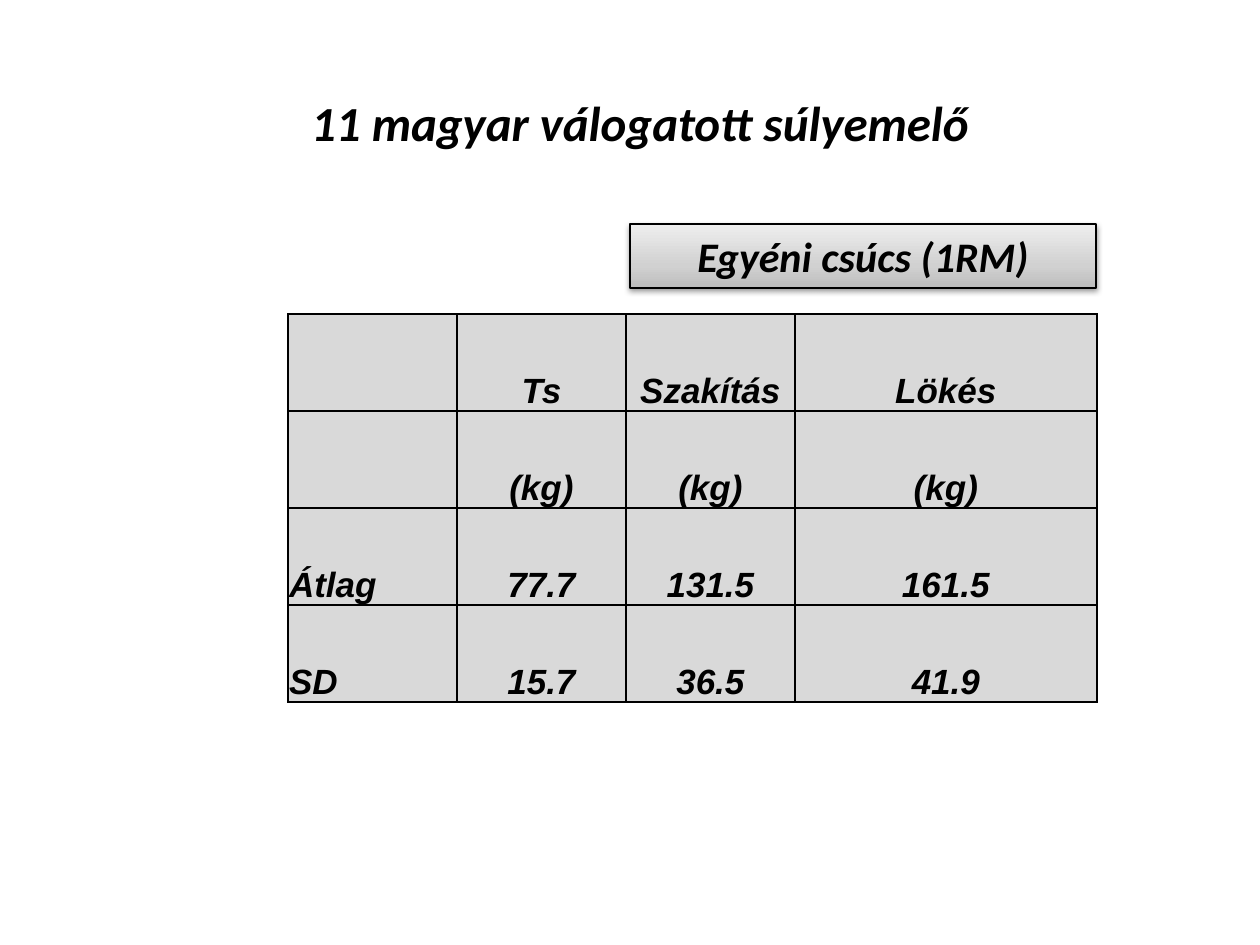
"""Build a slide with the results table of Hungarian weightlifters."""
import pptx
import pptx.dml.color
import pptx.enum.shapes
import pptx.enum.text
import pptx.oxml
import pptx.oxml.ns
import pptx.util

SCALE = 914400 / 126
BLACK = pptx.dml.color.RGBColor(0, 0, 0)
CELL_GRAY = pptx.dml.color.RGBColor(0xD9, 0xD9, 0xD9)
GRADIENT = {0: "BDBDBD", 35: "D1D1D1", 100: "EEEEEE"}
NAMESPACE = pptx.oxml.ns.nsdecls("a")
CENTER = pptx.enum.text.PP_ALIGN.CENTER
LEFT = pptx.enum.text.PP_ALIGN.LEFT


def px(*lengths):
    return [pptx.util.Emu(round(length * SCALE)) for length in lengths]


def write(text_frame, text, font_name, size, alignment=CENTER):
    paragraph = text_frame.paragraphs[0]
    paragraph.alignment = alignment
    run = paragraph.add_run()
    run.text = text
    font_format = {"name": font_name, "size": pptx.util.Pt(size), "bold": True, "italic": True}
    for name, value in font_format.items():
        setattr(run.font, name, value)
    run.font.color.rgb = BLACK


presentation = pptx.Presentation()
presentation.slide_width, presentation.slide_height = px(1260, 945)
slide = presentation.slides.add_slide(presentation.slide_layouts[6])

columns = [169, 169, 169, 302]
row_height = 97
rows = [
    ["", "Ts", "Szakítás", "Lökés"],
    ["", "(kg)", "(kg)", "(kg)"],
    ["Átlag", "77.7", "131.5", "161.5"],
    ["SD", "15.7", "36.5", "41.9"],
]
table = slide.shapes.add_table(
    len(rows), len(columns), *px(288, 314, sum(columns), row_height * len(rows))
).table
table.first_row = table.horz_banding = False
for column, width in zip(table.columns, columns):
    column.width = px(width)[0]
cell_format = dict(zip(
    ["margin_left", "margin_top", "margin_right", "margin_bottom"], px(1, 1, 1, 0)
))
cell_format["vertical_anchor"] = pptx.enum.text.MSO_ANCHOR.BOTTOM
for row_index, row in enumerate(rows):
    table.rows[row_index].height = px(row_height)[0]
    for column_index, text in enumerate(row):
        cell = table.cell(row_index, column_index)
        for name, value in cell_format.items():
            setattr(cell, name, value)
        properties = cell._tc.get_or_add_tcPr()
        for side in "LRTB":
            properties.append(pptx.oxml.parse_xml(
                f'<a:ln{side} {NAMESPACE} w="12700"><a:solidFill>'
                f'<a:srgbClr val="{BLACK}"/></a:solidFill></a:ln{side}>'
            ))
        cell.fill.solid()
        cell.fill.fore_color.rgb = CELL_GRAY
        if text:
            write(cell.text_frame, text, "Arial", 20, CENTER if column_index else LEFT)

title = slide.shapes.add_textbox(*px(144, 86, 992, 72))
title.text_frame.word_wrap = True
write(title.text_frame, "11 magyar válogatott súlyemelő", "Calibri", 28)

record_label = slide.shapes.add_shape(
    pptx.enum.shapes.MSO_SHAPE.RECTANGLE, *px(630, 224, 466, 64)
)
record_label.fill.gradient()
record_label.fill.gradient_angle = 90
stops = record_label._element.spPr.find(".//" + pptx.oxml.ns.qn("a:gsLst"))
for stop in list(stops):
    stops.remove(stop)
for position, color in GRADIENT.items():
    stops.append(pptx.oxml.parse_xml(
        f'<a:gs {NAMESPACE} pos="{position * 1000}"><a:srgbClr val="{color}"/></a:gs>'
    ))
record_label.line.color.rgb = BLACK
record_label.line.width = pptx.util.Pt(0.75)
record_label.shadow.inherit = False
record_label._element.spPr.find(pptx.oxml.ns.qn("a:effectLst")).append(pptx.oxml.parse_xml(
    f'<a:outerShdw {NAMESPACE} blurRad="40000" dist="20000" dir="5400000" rotWithShape="0">'
    f'<a:srgbClr val="{BLACK}"><a:alpha val="38000"/></a:srgbClr></a:outerShdw>'
))
record_label.text_frame.word_wrap = True
write(record_label.text_frame, "Egyéni csúcs (1RM)", "Calibri", 24)

presentation.save("out.pptx")
